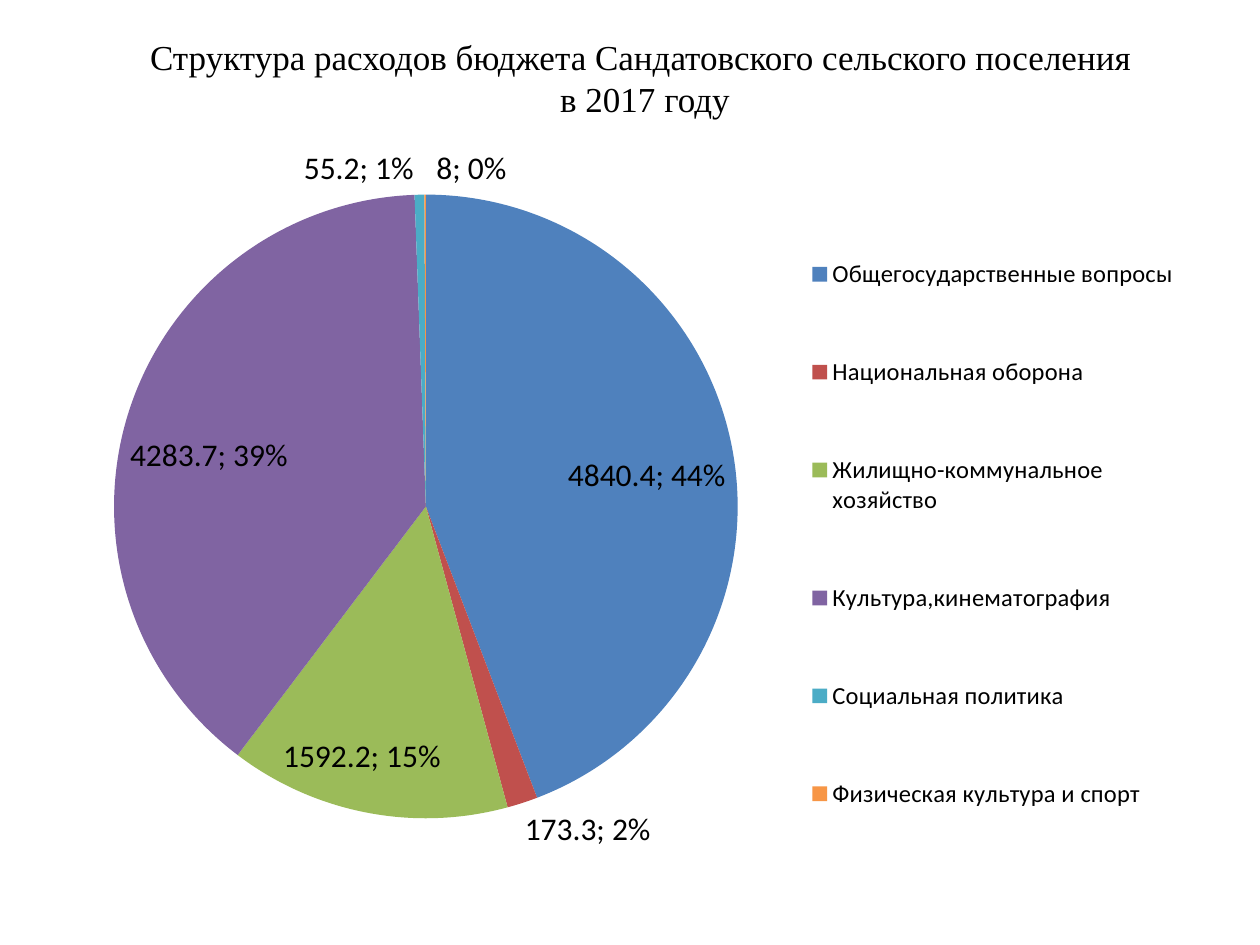
from lxml import etree
from pptx import Presentation
from pptx.chart.data import CategoryChartData as ChartData
from pptx.dml.color import RGBColor as RGB
from pptx.enum.chart import XL_CHART_TYPE as CT, XL_LABEL_POSITION as LP, XL_LEGEND_POSITION as LEG
from pptx.enum.text import MSO_ANCHOR as ANCHOR, PP_ALIGN as ALIGN
from pptx.oxml.ns import qn
from pptx.util import Cm, Pt

COLORS = {
    "text": "000000",
    "Общегосударственные вопросы": "4F81BD",
    "Национальная оборона": "C0504D",
    "Жилищно-коммунальное хозяйство": "9BBB59",
    "Культура,кинематография": "8064A2",
    "Социальная политика": "4BACC6",
    "Физическая культура и спорт": "F79646",
}
EXPENSES = {
    "Общегосударственные вопросы": 4840.4,
    "Национальная оборона": 173.3,
    "Жилищно-коммунальное хозяйство": 1592.2,
    "Культура,кинематография": 4283.7,
    "Социальная политика": 55.2,
    "Физическая культура и спорт": 8,
}


def set_font(font, name, size):
    for key, value in {"name": name, "size": Pt(size), "bold": False}.items():
        setattr(font, key, value)
    font.color.rgb = RGB.from_string(COLORS["text"])


def set_layout(parent, index, values):
    for old in parent.findall(qn("c:layout")):
        parent.remove(old)
    layout = etree.Element(qn("c:layout"))
    manual = etree.SubElement(layout, qn("c:manualLayout"))
    for key, value in values.items():
        etree.SubElement(manual, qn(f"c:{key}")).set("val", str(value))
    parent.insert(index, layout)


prs = Presentation()
prs.slide_width, prs.slide_height = Cm(25.4), Cm(19.05)
s = prs.slides.add_slide(prs.slide_layouts[6])

title = s.shapes.add_textbox(Cm(1), Cm(0.58), Cm(23.83), Cm(1.98))
tf = title.text_frame
for key, value in {"word_wrap": True, "vertical_anchor": ANCHOR.MIDDLE}.items():
    setattr(tf, key, value)
p = tf.paragraphs[0]
p.text = "Структура расходов бюджета Сандатовского сельского поселения\v в 2017 году"
p.alignment = ALIGN.CENTER
for r in p.runs:
    set_font(r.font, "Times New Roman", 20)

data = ChartData()
data.categories = list(EXPENSES)
data.add_series("Series 1", list(EXPENSES.values()))
frame = s.shapes.add_chart(CT.PIE, Cm(1.27), Cm(2.59), Cm(22.86), Cm(15.88), data)
chart = frame.chart
chart.has_title = False
set_font(chart.font, "Calibri", 18)

plot = chart.plots[0]
plot.vary_by_categories = True
for i, name in enumerate(EXPENSES):
    fill = plot.series[0].points[i].format.fill
    fill.solid()
    fill.fore_color.rgb = RGB.from_string(COLORS[name])

plot.has_data_labels = True
labels = plot.data_labels
label_format = {
    "show_value": True,
    "show_percentage": True,
    "show_category_name": False,
    "show_legend_key": False,
    "position": LP.BEST_FIT,
}
for key, value in label_format.items():
    setattr(labels, key, value)
set_font(labels.font, "Calibri", 18)
separator = etree.Element(qn("c:separator"))
separator.text = "; "
labels._element.find(qn("c:showBubbleSize")).addnext(separator)

chart.has_legend = True
legend = chart.legend
for key, value in {"position": LEG.CORNER, "include_in_layout": False}.items():
    setattr(legend, key, value)
set_font(legend.font, "Calibri", 14)

edges = {"xMode": "edge", "yMode": "edge"}
set_layout(chart._chartSpace.chart.plotArea, 0,
           {"layoutTarget": "inner", **edges, "x": 0.045, "y": 0.08, "w": 0.55, "h": 0.8})
set_layout(legend._element, 1, {**edges, "x": 0.65, "y": 0.08, "w": 0.34, "h": 0.87})

prs.save("out.pptx")
